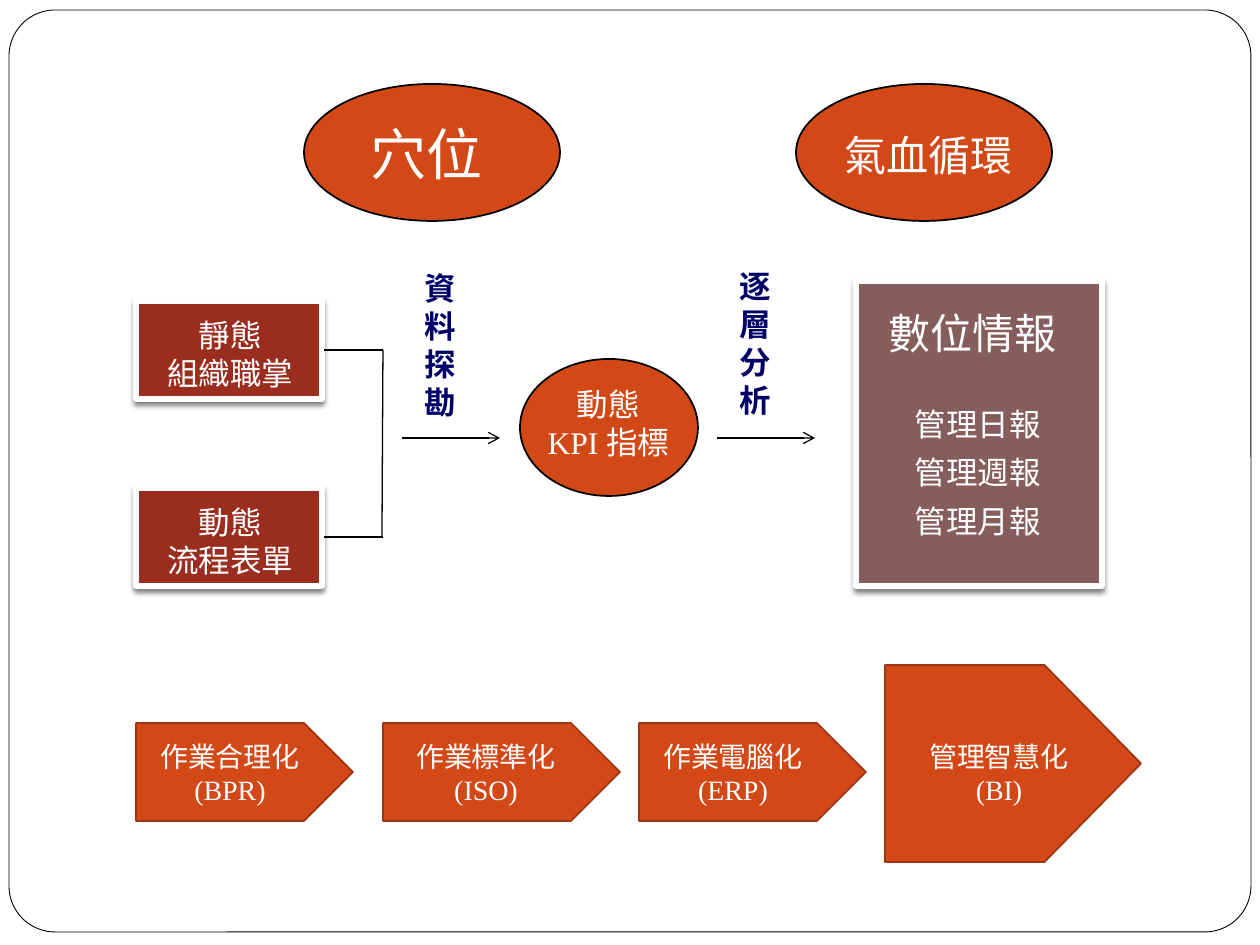
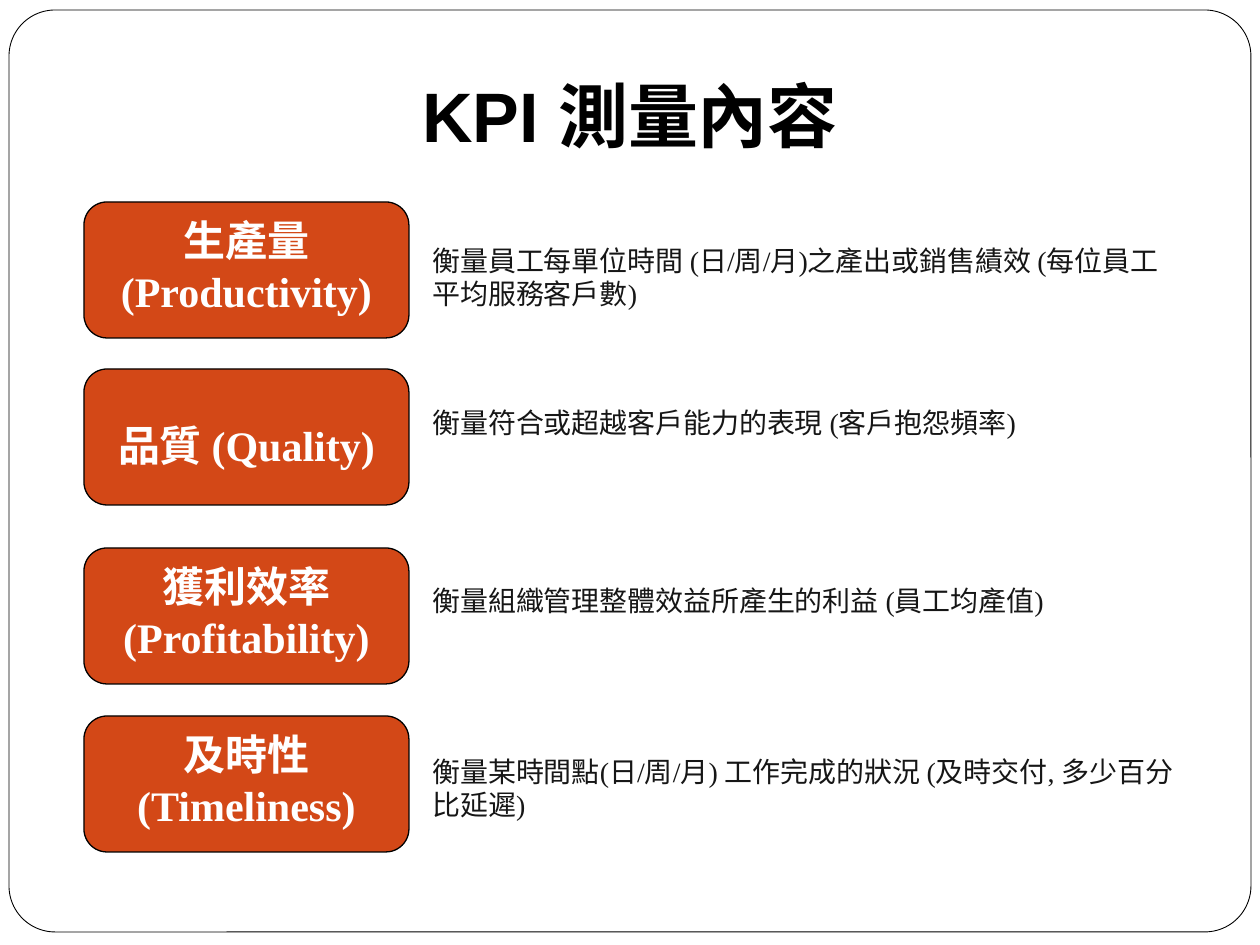
from lxml import etree
from pptx import Presentation
from pptx import util as u
from pptx.dml.color import RGBColor
from pptx.enum import shapes, text
from pptx.oxml.ns import qn

PX_PER_INCH = 126
SLIDE_SIZE = (1260, 945)

WHITE = RGBColor(0xFF, 0xFF, 0xFF)
BLACK = RGBColor(0x00, 0x00, 0x00)
ORANGE = RGBColor(0xD3, 0x48, 0x17)
DARK_ORANGE = RGBColor(0x9C, 0x35, 0x11)
BRICK = RGBColor(0x9B, 0x2D, 0x1F)
MAUVE = RGBColor(0x85, 0x5D, 0x5D)
NAVY = RGBColor(0x00, 0x00, 0x66)
INK = RGBColor(0x16, 0x16, 0x16)

SERIF, SANS = "Times New Roman", "Arial"
LEFT, CENTER = text.PP_ALIGN.LEFT, text.PP_ALIGN.CENTER
KIND = shapes.MSO_SHAPE

# Slide 1 content: boxes are left, top, width, height
THEMES = [  # ellipse left, label, size, label box
    (304, "穴位", 32, (353, 113, 147, 81)),
    (796, "氣血循環", 24, (806, 123, 246, 64)),
]
SOURCES = [(301, ["靜態", "組織職掌"]), (488, ["動態", "流程表單"])]
STEPS = [  # arrow start, label left, label top, label
    (402, 412, 263, "資料探勘"),
    (717, 727, 261, "逐層分析"),
]
KPI_LABEL = ["動態", "KPI 指標"]
REPORT_TITLE = "數位情報"
REPORTS = ["管理日報", "管理週報", "管理月報"]
STAGES = [  # arrow box, point depth, label left, label
    ((136, 723, 217, 98), 0.5, 146, ["作業合理化", "(BPR)"]),
    ((383, 723, 237, 98), 0.5, 402, ["作業標準化", "(ISO)"]),
    ((639, 723, 227, 98), 0.5, 649, ["作業電腦化", "(ERP)"]),
    ((885, 665, 256, 197), 0.49, 915, ["管理智慧化(BI)"]),
]

# Slide 2 content
TITLE = "KPI 測量內容"
MEASURES = [  # card top, inset above name, name, text top, text width, text
    (202, 6, "生產量(Productivity)", 237, 756,
     "衡量員工每單位時間 (日/周/月)之產出或銷售績效 (每位員工平均服務客戶數)"),
    (369, 44, "品質 (Quality)", 399, 809,
     "衡量符合或超越客戶能力的表現 (客戶抱怨頻率)"),
    (548, 6, "獲利效率(Profitability)", 577, 703,
     "衡量組織管理整體效益所產生的利益 (員工均產值)"),
    (716, 6, "及時性(Timeliness)", 748, 777,
     "衡量某時間點(日/周/月) 工作完成的狀況 (及時交付, 多少百分比延遲)"),
]


def px(length):
    return u.Emu(round(length * 914400 / PX_PER_INCH))


def write(shape, lines, size, color=WHITE, align=CENTER, bold=False,
          font=SERIF, before=0):
    frame = shape.text_frame
    frame.word_wrap = True
    frame.vertical_anchor = text.MSO_ANCHOR.TOP
    for index, line in enumerate(lines):
        paragraph = frame.add_paragraph() if index else frame.paragraphs[0]
        paragraph.text = line
        paragraph.alignment = align
        paragraph.space_before = u.Pt(before)
        paragraph.font.name = font
        paragraph.font.size = u.Pt(size)
        paragraph.font.bold = bold
        paragraph.font.color.rgb = color


def add_label(slide, box, lines, size, **style):
    label = slide.shapes.add_textbox(*map(px, box))
    write(label, lines, size, **style)
    return label


def add_block(slide, kind, box, fill, line, width, adjust=None):
    block = slide.shapes.add_shape(kind, *map(px, box))
    block.shadow.inherit = False
    block.fill.solid()
    block.fill.fore_color.rgb = fill
    block.line.color.rgb = line
    block.line.width = u.Pt(width)
    if adjust is not None:
        block.adjustments[0] = adjust
    return block


def add_raised_panel(slide, box, fill):
    """White-edged rectangle with a soft shadow below."""
    panel = add_block(slide, KIND.RECTANGLE, box, fill, WHITE, 3)
    effects = panel._element.spPr.find(qn("a:effectLst"))
    shadow = etree.SubElement(effects, qn("a:outerShdw"), blurRad=str(u.Pt(3)),
                              dist=str(u.Pt(2)), dir="5400000", rotWithShape="0")
    color = etree.SubElement(shadow, qn("a:srgbClr"), val=str(BLACK))
    etree.SubElement(color, qn("a:alpha"), val="50000")


def add_line(slide, start, end, arrow=False):
    line = slide.shapes.add_connector(shapes.MSO_CONNECTOR.STRAIGHT,
                                      *map(px, start + end))
    line.line.color.rgb = BLACK
    line.line.width = u.Pt(0.75)
    if arrow:
        etree.SubElement(line.line._get_or_add_ln(), qn("a:tailEnd"), type="arrow")
    etree.SubElement(line._element.spPr, qn("a:effectLst"))


def add_framed_slide(presentation):
    slide = presentation.slides.add_slide(presentation.slide_layouts[6])
    add_block(slide, KIND.ROUNDED_RECTANGLE, (9, 10, 1242, 922),
              WHITE, BLACK, 0.5, 0.05)
    return slide


def build_flow(slide):
    # Themes along the top
    for left, name, size, label_box in THEMES:
        add_block(slide, KIND.OVAL, (left, 84, 256, 137), ORANGE, BLACK, 1)
        add_label(slide, label_box, [name], size)

    # Sources, joined by a bracket
    for top, lines in SOURCES:
        add_raised_panel(slide, (136, top, 186, 98), BRICK)
        add_label(slide, (146, top + 9, 168, 89), lines, 18)
        add_line(slide, (324, top + 49), (383, top + 49))
    add_line(slide, (383, 350), (382, 537))

    # Steps with their arrows
    for start, left, top, name in STEPS:
        add_line(slide, (start, 438), (start + 98, 438), arrow=True)
        add_label(slide, (left, top, 69, 165), [name], 18,
                  color=NAVY, align=LEFT, bold=True)

    # KPI and reports
    add_block(slide, KIND.OVAL, (520, 359, 178, 137), ORANGE, BLACK, 1)
    add_label(slide, (500, 379, 217, 89), KPI_LABEL, 18)
    add_raised_panel(slide, (856, 281, 246, 305), MAUVE)
    add_label(slide, (864, 301, 217, 64), [REPORT_TITLE], 24)
    add_label(slide, (885, 399, 186, 149), REPORTS, 18, before=6)

    # Stages along the bottom
    for box, point, left, lines in STAGES:
        add_block(slide, KIND.PENTAGON, box, ORANGE, DARK_ORANGE, 1, point)
        add_label(slide, (left, 733, 168, 81), lines, 16)


def build_measures(slide):
    title = add_label(slide, (63, 38, 1134, 131), [TITLE], 40,
                      color=BLACK, bold=True, font=SANS)
    title.text_frame.vertical_anchor = text.MSO_ANCHOR.BOTTOM
    title.text_frame.margin_bottom = px(13)

    for top, inset, name, text_top, width, meaning in MEASURES:
        card = add_block(slide, KIND.ROUNDED_RECTANGLE, (84, top, 325, 136),
                         ORANGE, BLACK, 0.75, 0.17)
        write(card, [name], 24, bold=True)
        card.text_frame.margin_top = px(inset)
        add_label(slide, (420, text_top, width, 81), [meaning], 16,
                  color=INK, align=LEFT)


def main():
    presentation = Presentation()
    presentation.slide_width, presentation.slide_height = map(px, SLIDE_SIZE)
    for build in (build_flow, build_measures):
        build(add_framed_slide(presentation))
    presentation.save("out.pptx")


if __name__ == "__main__":
    main()
